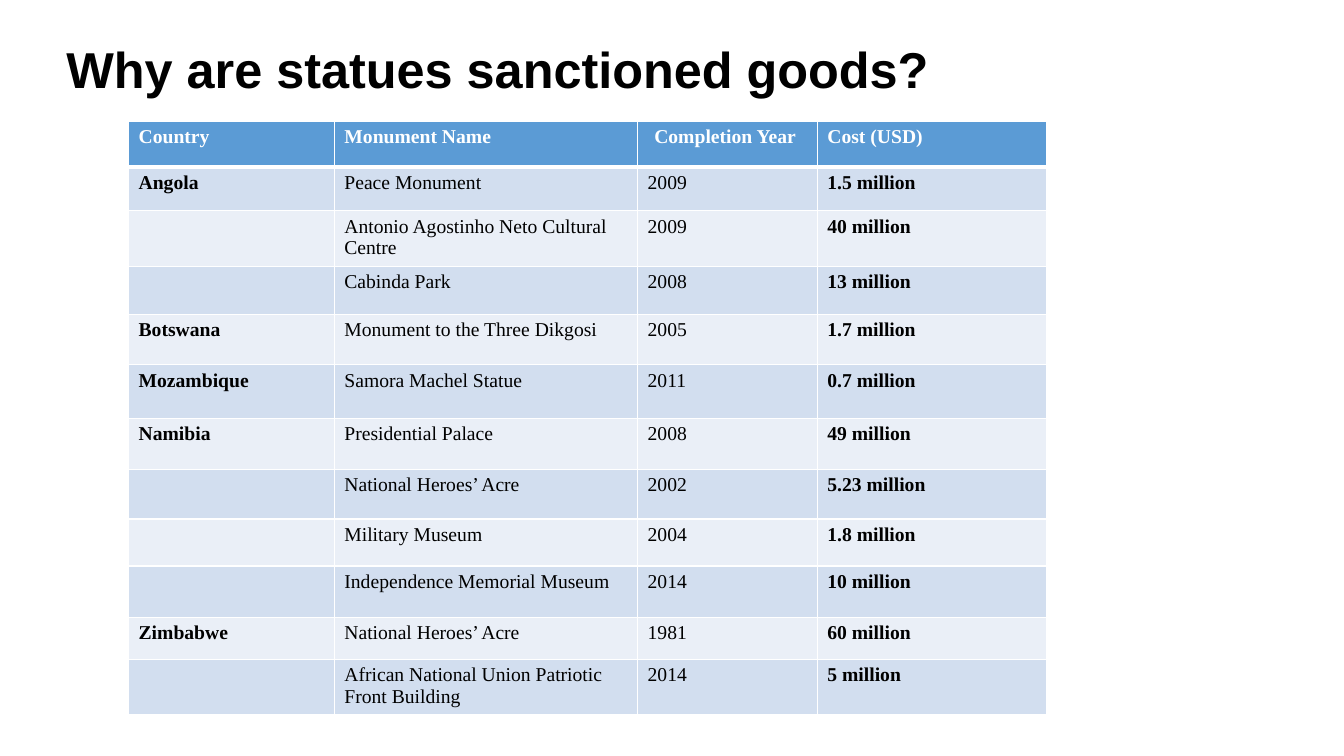
from dataclasses import dataclass

from lxml import etree
from pptx import Presentation
from pptx import util as u
from pptx.dml.color import RGBColor
from pptx.enum import text
from pptx.oxml import ns


@dataclass(frozen=True)
class Theme:
    ink: str = "000000"
    paper: str = "FFFFFF"
    header: str = "5B9BD5"
    bands: tuple[str, str] = ("D2DEEF", "EAEFF7")
    title_font: str = "Arial"
    table_font: str = "Times New Roman"
    title_size: int = 36
    table_size: int = 14
    thin_line: int = 1
    header_line: int = 3


@dataclass(frozen=True)
class Column:
    heading: str
    width: float
    bold: bool
    heading_align: text.PP_ALIGN = text.PP_ALIGN.LEFT


@dataclass(frozen=True)
class Monument:
    country: str
    name: str
    year: str
    cost: str
    height: float

    def values(self) -> tuple[str, ...]:
        return self.country, self.name, self.year, self.cost


THEME = Theme()
SLIDE_WIDTH, SLIDE_HEIGHT = u.Inches(13.33), u.Inches(7.5)
GRID_COLUMNS, GRID_ROWS = 160, 90
TITLE_AREA = (6.7, 4.7, 143.9, 7.8)
TABLE_LEFT, TABLE_TOP, HEADER_HEIGHT = 15.3, 14.4, 5.5

COLUMNS = [
    Column("Country", 24.5, True),
    Column("Monument Name", 36.1, False),
    Column("Completion Year ", 21.4, False, text.PP_ALIGN.CENTER),
    Column("Cost (USD)", 27.3, True),
]
MONUMENTS = [
    Monument("Angola", "Peace Monument", "2009", "1.5 million", 5.2),
    Monument("", "Antonio Agostinho Neto Cultural Centre", "2009", "40 million", 6.6),
    Monument("", "Cabinda Park", "2008", "13 million", 5.7),
    Monument("Botswana", "Monument to the Three Dikgosi", "2005", "1.7 million", 6),
    Monument("Mozambique", "Samora Machel Statue", "2011", "0.7 million", 6.4),
    Monument("Namibia", "Presidential Palace", "2008", "49 million", 6.1),
    Monument("", "National Heroes’ Acre", "2002", "5.23 million", 5.9),
    Monument("", "Military Museum", "2004", "1.8 million", 5.6),
    Monument("", "Independence Memorial Museum", "2014", "10 million", 6.1),
    Monument("Zimbabwe", "National Heroes’ Acre", "1981", "60 million", 5),
    Monument("", "African National Union Patriotic Front Building", "2014", "5 million", 6.6),
]


def across(columns: float) -> int:
    """Width of a number of grid columns."""
    return round(SLIDE_WIDTH * columns / GRID_COLUMNS)


def down(rows: float) -> int:
    """Height of a number of grid rows."""
    return round(SLIDE_HEIGHT * rows / GRID_ROWS)


def add_span(para, words: str, font: str, size: int, color: str, bold: bool) -> None:
    span = para.add_run()
    span.text = words
    span.font.name = font
    span.font.size = u.Pt(size)
    span.font.bold = bold
    span.font.color.rgb = RGBColor.from_string(color)


def add_title(page, words: str) -> None:
    box = page.shapes.title
    left, top, width, height = TITLE_AREA
    box.left, box.top = across(left), down(top)
    box.width, box.height = across(width), down(height)
    frame = box.text_frame
    frame.word_wrap = True
    frame.auto_size = text.MSO_AUTO_SIZE.NONE
    frame.vertical_anchor = text.MSO_ANCHOR.MIDDLE
    para = frame.paragraphs[0]
    para.alignment = text.PP_ALIGN.LEFT
    para.line_spacing = 0.9
    add_span(para, words, THEME.title_font, THEME.title_size, THEME.ink, True)


def add_borders(cell, top: int, bottom: int) -> None:
    properties = cell._tc.get_or_add_tcPr()
    widths = {"L": THEME.thin_line, "R": THEME.thin_line, "T": top, "B": bottom}
    for side, width in widths.items():
        line = etree.SubElement(properties, ns.qn(f"a:ln{side}"), w=str(u.Pt(width)))
        fill = etree.SubElement(line, ns.qn("a:solidFill"))
        etree.SubElement(fill, ns.qn("a:srgbClr"), val=THEME.paper)


def fill_cell(cell, words: str, row: int, column: Column) -> None:
    """Style one cell; row 0 is the header and the rows below alternate."""
    is_header = row == 0
    add_borders(
        cell,
        top=THEME.header_line if row == 1 else THEME.thin_line,
        bottom=THEME.header_line if is_header else THEME.thin_line,
    )
    cell.fill.solid()
    shade = THEME.header if is_header else THEME.bands[(row - 1) % 2]
    cell.fill.fore_color.rgb = RGBColor.from_string(shade)
    para = cell.text_frame.paragraphs[0]
    para.alignment = column.heading_align if is_header else text.PP_ALIGN.LEFT
    if words:
        color = THEME.paper if is_header else THEME.ink
        add_span(para, words, THEME.table_font, THEME.table_size, color,
                 is_header or column.bold)


def add_monument_table(page) -> None:
    heights = [HEADER_HEIGHT, *(monument.height for monument in MONUMENTS)]
    rows = [[column.heading for column in COLUMNS],
            *(monument.values() for monument in MONUMENTS)]
    table = page.shapes.add_table(
        len(rows), len(COLUMNS), across(TABLE_LEFT), down(TABLE_TOP),
        across(sum(column.width for column in COLUMNS)), down(sum(heights)),
    ).table
    table.horz_banding = False
    for index, column in enumerate(COLUMNS):
        table.columns[index].width = across(column.width)
    for row, (height, values) in enumerate(zip(heights, rows)):
        table.rows[row].height = down(height)
        for index, (column, words) in enumerate(zip(COLUMNS, values)):
            fill_cell(table.cell(row, index), words, row, column)


def main() -> None:
    deck = Presentation()
    deck.slide_width, deck.slide_height = SLIDE_WIDTH, SLIDE_HEIGHT
    page = deck.slides.add_slide(deck.slide_layouts.get_by_name("Title Only"))
    add_title(page, "Why are statues sanctioned goods?")
    add_monument_table(page)
    deck.save("out.pptx")


if __name__ == "__main__":
    main()
